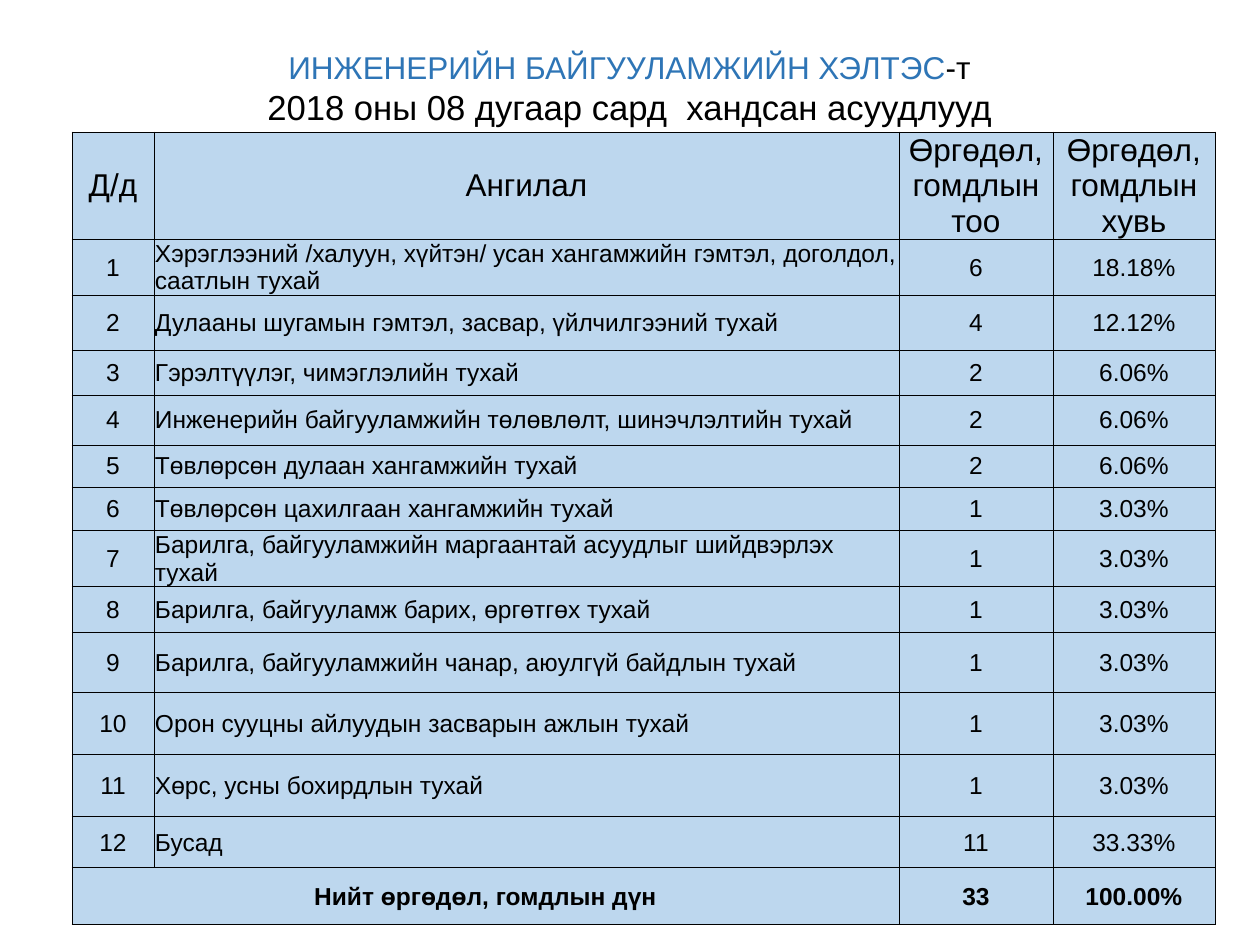
from dataclasses import dataclass

from lxml.etree import SubElement
from pptx import Presentation
from pptx.dml.color import RGBColor
from pptx.enum.text import MSO_ANCHOR, MSO_AUTO_SIZE, PP_ALIGN
from pptx.oxml.ns import qn
from pptx.util import Pt

TITLE_LINES = [
    [("ИНЖЕНЕРИЙН БАЙГУУЛАМЖИЙН ХЭЛТЭС", "accent", 18), ("-т", "ink", 18)],
    [("2018 оны 08 дугаар сард  хандсан асуудлууд", "ink", 19.8)],
]
HEADINGS = ("Д/д", "Ангилал", "Өргөдөл, гомдлын тоо", "Өргөдөл, гомдлын хувь")
CATEGORIES = [
    ("Хэрэглээний /халуун, хүйтэн/ усан хангамжийн гэмтэл, доголдол, саатлын тухай", "6", "18.18%"),
    ("Дулааны шугамын гэмтэл, засвар, үйлчилгээний тухай", "4", "12.12%"),
    ("Гэрэлтүүлэг, чимэглэлийн тухай", "2", "6.06%"),
    ("Инженерийн байгууламжийн төлөвлөлт, шинэчлэлтийн тухай", "2", "6.06%"),
    ("Төвлөрсөн дулаан хангамжийн тухай", "2", "6.06%"),
    ("Төвлөрсөн цахилгаан хангамжийн тухай", "1", "3.03%"),
    ("Барилга, байгууламжийн маргаантай асуудлыг шийдвэрлэх тухай", "1", "3.03%"),
    ("Барилга, байгууламж барих, өргөтгөх тухай", "1", "3.03%"),
    ("Барилга, байгууламжийн чанар, аюулгүй байдлын тухай", "1", "3.03%"),
    ("Орон сууцны айлуудын засварын ажлын тухай", "1", "3.03%"),
    ("Хөрс, усны бохирдлын тухай", "1", "3.03%"),
    ("Бусад", "11", "33.33%"),
]
TOTAL = ("Нийт өргөдөл, гомдлын дүн", "", "33", "100.00%")

SLIDE_SIZE = (1260, 945)
TITLE_BOX = (96, 47, 1067, 82)
TABLE_ORIGIN = (72, 132)
COLUMN_WIDTHS = (82, 745, 154, 162)
ROW_HEIGHTS = (107, 56, 55, 45, 50, 42, 43, 57, 46, 60, 62, 62, 51, 57)


@dataclass(frozen=True)
class Theme:
    font: str = "Arial"
    ink: str = "000000"
    accent: str = "2E75B6"
    cell: str = "BDD7EE"
    heading_size: int = 18
    body_size: int = 14
    border: float = 0.5


THEME = Theme()


def px(length):
    return round(length * 914400 / 126)


def style_run(run, size, color=THEME.ink, bold=False):
    run.font.name = THEME.font
    run.font.size = Pt(size)
    run.font.bold = bold
    run.font.color.rgb = RGBColor.from_string(color)


def add_title(slide):
    title = slide.shapes.title
    title.left, title.top, title.width, title.height = map(px, TITLE_BOX)
    frame = title.text_frame
    frame.word_wrap = True
    frame.auto_size = MSO_AUTO_SIZE.NONE
    frame.vertical_anchor = MSO_ANCHOR.MIDDLE
    for index, line in enumerate(TITLE_LINES):
        paragraph = frame.paragraphs[0] if index == 0 else frame.add_paragraph()
        paragraph.alignment = PP_ALIGN.CENTER
        for text, color, size in line:
            run = paragraph.add_run()
            run.text = text
            style_run(run, size, getattr(THEME, color))


def add_borders(cell):
    properties = cell._tc.get_or_add_tcPr()
    for position, side in enumerate(("a:lnL", "a:lnR", "a:lnT", "a:lnB")):
        line = SubElement(properties, qn(side), w=str(Pt(THEME.border)))
        fill = SubElement(line, qn("a:solidFill"))
        SubElement(fill, qn("a:srgbClr"), val=THEME.ink)
        properties.insert(position, line)


def format_cell(cell, text, size, bold, alignment):
    cell.margin_left = cell.margin_right = cell.margin_top = px(1)
    cell.margin_bottom = 0
    cell.vertical_anchor = MSO_ANCHOR.MIDDLE
    cell.fill.solid()
    cell.fill.fore_color.rgb = RGBColor.from_string(THEME.cell)
    add_borders(cell)
    cell.text_frame.text = text
    paragraph = cell.text_frame.paragraphs[0]
    paragraph.alignment = alignment
    for run in paragraph.runs:
        style_run(run, size, bold=bold)


def add_complaints_table(slide):
    numbered = [(str(number), *row) for number, row in enumerate(CATEGORIES, 1)]
    rows = [HEADINGS, *numbered, TOTAL]
    last = len(rows) - 1
    left, top = TABLE_ORIGIN
    table = slide.shapes.add_table(
        len(rows), len(HEADINGS), px(left), px(top),
        px(sum(COLUMN_WIDTHS)), px(sum(ROW_HEIGHTS)),
    ).table
    table.horz_banding = False
    table.first_row = False
    for column, width in zip(table.columns, COLUMN_WIDTHS):
        column.width = px(width)
    for row, height in zip(table.rows, ROW_HEIGHTS):
        row.height = px(height)
    for row_index, row in enumerate(rows):
        size = THEME.heading_size if row_index == 0 else THEME.body_size
        for column_index, text in enumerate(row):
            is_category = column_index == 1 and 0 < row_index < last
            alignment = PP_ALIGN.LEFT if is_category else PP_ALIGN.CENTER
            cell = table.cell(row_index, column_index)
            format_cell(cell, text, size, row_index == last, alignment)
    table.cell(last, 0).merge(table.cell(last, 1))


def main():
    presentation = Presentation()
    presentation.slide_width, presentation.slide_height = map(px, SLIDE_SIZE)
    slide = presentation.slides.add_slide(presentation.slide_layouts[5])
    add_title(slide)
    add_complaints_table(slide)
    presentation.save("out.pptx")


if __name__ == "__main__":
    main()
